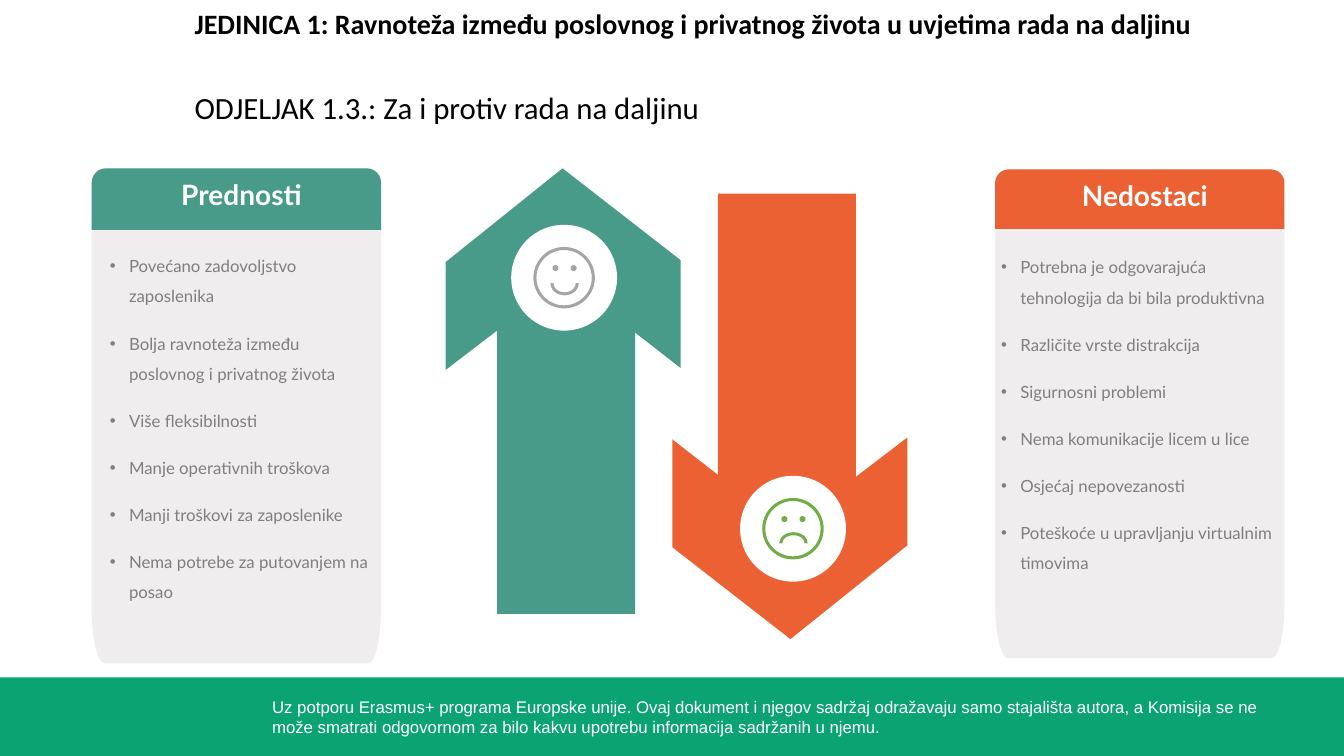
from math import cos, pi, sin

from lxml.etree import SubElement
from pptx import Presentation
from pptx.dml.color import RGBColor
from pptx.enum.shapes import MSO_SHAPE
from pptx.enum.text import PP_ALIGN
from pptx.oxml.ns import qn
from pptx.util import Inches, Pt

WHITE = RGBColor(0xFF, 0xFF, 0xFF)
BLACK = RGBColor(0, 0, 0)
GREEN = RGBColor(0x0C, 0xA3, 0x73)
TEAL = RGBColor(0x48, 0x9B, 0x88)
ORANGE = RGBColor(0xEB, 0x61, 0x33)
PALE = RGBColor(0xEF, 0xED, 0xED)
GREY = RGBColor(0x7F, 0x7F, 0x7F)
SILVER = RGBColor(0xA5, 0xA5, 0xA5)
LIME = RGBColor(0x70, 0xAD, 0x47)

ARROW = [(2.33, 0.91), (1.16, 0), (0, 0.93), (0, 2), (0.51, 1.61),
         (0.51, 4.42), (1.88, 4.42), (1.88, 1.63), (2.33, 1.98)]
PROS = ["Povećano zadovoljstvo zaposlenika",
        "Bolja ravnoteža između poslovnog i privatnog života",
        "Više fleksibilnosti",
        "Manje operativnih troškova",
        "Manji troškovi za zaposlenike",
        "Nema potrebe za putovanjem na posao"]
CONS = ["Potrebna je odgovarajuća tehnologija da bi bila produktivna",
        "Različite vrste distrakcija",
        "Sigurnosni problemi",
        "Nema komunikacije licem u lice",
        "Osjećaj nepovezanosti",
        "Poteškoće u upravljanju virtualnim timovima"]


def paint(shape, color):
    shape.shadow.inherit = False
    shape.fill.solid()
    shape.fill.fore_color.rgb = color
    shape.line.fill.background()
    return shape


def preset(slide, kind, box, color):
    return paint(slide.shapes.add_shape(kind, *map(Inches, box)), color)


def outline(slide, points, color):
    first, *rest = [(Inches(x), Inches(y)) for x, y in points]
    form = slide.shapes.build_freeform(*first, scale=1.0)
    form.add_line_segments(rest, close=True)
    return paint(form.convert_to_shape(), color)


def arc(x, y, rx, ry, start, end, steps=16):
    turns = [start + (end - start) * i / steps for i in range(steps + 1)]
    return [(x + rx * cos(t), y + ry * sin(t)) for t in turns]


def write(slide, box, lines, size, font, color, bold=False,
          align=PP_ALIGN.LEFT, inset=(0.1, 0.05), bullets=False):
    frame = slide.shapes.add_textbox(*map(Inches, box)).text_frame
    frame.word_wrap = True
    frame.margin_left = frame.margin_right = Inches(inset[0])
    frame.margin_top = frame.margin_bottom = Inches(inset[1])
    for i, line in enumerate(lines):
        par = frame.add_paragraph() if i else frame.paragraphs[0]
        par.text = line
        par.alignment = align
        if bullets:
            bullet(par, color)
            par.line_spacing = 1.5
            if i:
                par.space_before = Pt(12)
        par.font.size = Pt(size)
        par.font.name = font
        par.font.bold = bold
        par.font.color.rgb = color


def bullet(par, color):
    props = par._p.get_or_add_pPr()
    props.set("marL", str(Inches(0.19)))
    props.set("indent", str(-Inches(0.19)))
    tint = SubElement(props, qn("a:buClr"))
    SubElement(tint, qn("a:srgbClr"), val=str(color))
    SubElement(props, qn("a:buFont"), typeface="Arial")
    SubElement(props, qn("a:buChar"), char="•")


def footer(slide, box):
    x, y, w, h = box
    preset(slide, MSO_SHAPE.RECTANGLE, box, GREEN)
    note = ("Uz potporu Erasmus+ programa Europske unije. Ovaj dokument i njegov "
            "sadržaj odražavaju samo stajališta autora, a Komisija se ne može "
            "smatrati odgovornom za bilo kakvu upotrebu informacija sadržanih u njemu.")
    write(slide, (x + 2.6, y + 0.14, 10.42, 0.5), [note], 12, "Arial", WHITE)


def arrow(slide, box, color, down=False):
    x, y, w, h = box
    points = [(w - px, h - py) if down else (px, py) for px, py in ARROW]
    outline(slide, [(x + px, y + py) for px, py in points], color)


def face(slide, box, color, base, rise):
    x, y, w, h = box
    preset(slide, MSO_SHAPE.OVAL, box, WHITE)
    x, y = x + 0.22, y + 0.22
    ring = preset(slide, MSO_SHAPE.DONUT, (x, y, 0.61, 0.61), color)
    ring.adjustments[0] = 0.05
    for eye in (0.19, 0.37):
        preset(slide, MSO_SHAPE.OVAL, (x + eye, y + 0.18, 0.06, 0.06), color)
    mid = x + 0.31
    inner = rise - 0.03 if rise > 0 else rise + 0.03
    lips = arc(mid, y + base, 0.14, rise, 0, pi)
    lips += arc(mid, y + base, 0.11, inner, pi, 0)
    outline(slide, lips, color)


def panel(slide, box, top, color, title, items, shift, width):
    x, y, w, h = box
    rx, ry = 0.13, 0.54
    corners = [(x + w - rx, y + h - ry), (x + rx, y + h - ry),
               (x + rx, y + ry), (x + w - rx, y + ry)]
    edge = []
    for i, (cx, cy) in enumerate(corners):
        edge += arc(cx, cy, rx, ry, i * pi / 2, (i + 1) * pi / 2)
    outline(slide, edge, PALE)
    head = preset(slide, MSO_SHAPE.ROUND_2_SAME_RECTANGLE, (x, y, w, top), color)
    head.adjustments[0] = 0.23
    write(slide, (x + 0.07, y + 0.04, 2.83, 0.49), [title], 20, "Lato", WHITE,
          bold=True, align=PP_ALIGN.CENTER)
    write(slide, (x + shift, y + 0.71, width, h - 0.75), items, 12, "Lato", GREY,
          inset=(0.12, 0.06), bullets=True)


def titles(slide, box):
    x, y, w, h = box
    write(slide, (x, y + 0.81, 6.68, 0.39),
          ["ODJELJAK 1.3.: Za i protiv rada na daljinu"],
          22, "Calibri", BLACK, inset=(0.01, 0.02))
    write(slide, (x, y, w, 0.35),
          ["JEDINICA 1: Ravnoteža između poslovnog i privatnog života "
           "u uvjetima rada na daljinu"],
          20, "Calibri", BLACK, bold=True, inset=(0.01, 0.01))


def main():
    deck = Presentation()
    deck.slide_width, deck.slide_height = Inches(13.33), Inches(7.5)
    slide = deck.slides.add_slide(deck.slide_layouts[6])
    footer(slide, (0, 6.72, 13.33, 0.78))
    arrow(slide, (4.42, 1.67, 2.33, 4.42), TEAL)
    face(slide, (5.07, 2.23, 1.05, 1.05), SILVER, 0.36, 0.12)
    arrow(slide, (6.67, 1.92, 2.33, 4.42), ORANGE, down=True)
    face(slide, (7.34, 4.72, 1.05, 1.05), LIME, 0.45, -0.11)
    panel(slide, (0.91, 1.67, 2.87, 4.91), 0.61, TEAL, "Prednosti", PROS, 0.06, 2.83)
    panel(slide, (9.87, 1.68, 2.87, 4.85), 0.59, ORANGE, "Nedostaci", CONS, -0.06, 3.05)
    titles(slide, (1.92, 0.05, 11.3, 1.2))
    deck.save("out.pptx")


if __name__ == "__main__":
    main()
